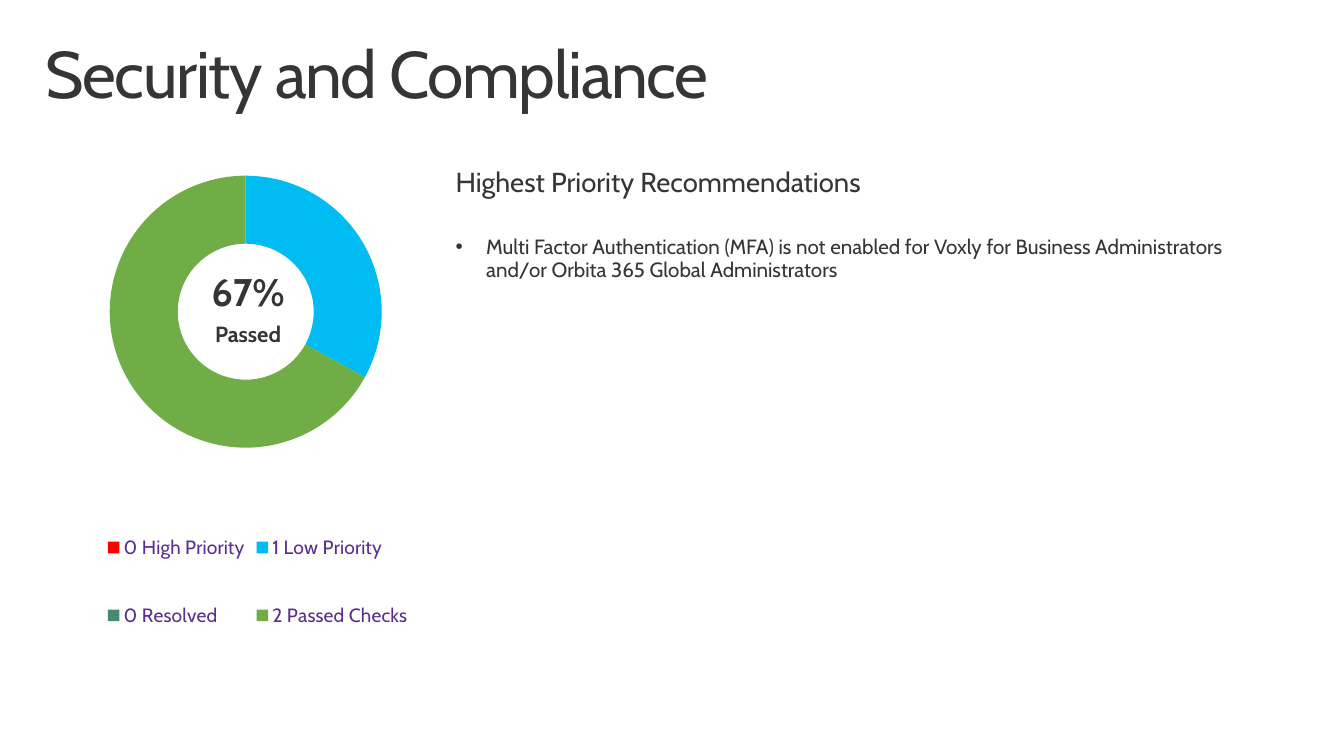
from dataclasses import dataclass

from lxml.etree import SubElement
from pptx import Presentation
from pptx.chart.data import CategoryChartData
from pptx.dml.color import RGBColor
from pptx.enum.chart import XL_CHART_TYPE, XL_LEGEND_POSITION
from pptx.enum.text import MSO_ANCHOR, PP_ALIGN
from pptx.oxml import parse_xml
from pptx.oxml.ns import nsdecls, qn
from pptx.util import Inches, Pt


@dataclass(frozen=True)
class Theme:
    font: str = "Cabin"
    text: str = "353535"
    legend: str = "5B2D91"
    title_size: int = 48
    score_size: int = 28
    heading_size: int = 20
    label_size: int = 16
    body_size: int = 15
    legend_size: int = 14
    chart_size: int = 10


@dataclass(frozen=True)
class Box:
    left: float
    top: float
    width: float
    height: float

    def lengths(self):
        return [Inches(n) for n in (self.left, self.top, self.width, self.height)]


THEME = Theme()
CHECKS = [
    ("0 High Priority ", 0, "FF0000"),
    ("", None, "001D49"),
    ("1 Low Priority", 33, "00BCF2"),
    ("", None, "A3008F"),
    ("0 Resolved", 0, "458B74"),
    ("", None, "D1D1D1"),
    ("2 Passed Checks", 67, "70AD47"),
]


def style_font(font, size, color=THEME.text, bold=False):
    font.name = THEME.font
    font.size = Pt(size)
    font.bold = bold
    font.color.rgb = RGBColor.from_string(color)


def add_text_frame(slide, box, side_inset, end_inset):
    frame = slide.shapes.add_textbox(*box.lengths()).text_frame
    frame.word_wrap = True
    frame.vertical_anchor = MSO_ANCHOR.TOP
    frame.margin_left = frame.margin_right = Inches(side_inset)
    frame.margin_top = frame.margin_bottom = Inches(end_inset)
    return frame


def write_paragraph(para, text, size, bold=False, space_after=6):
    para.text = text
    para.line_spacing = 0.9
    para.space_after = Pt(space_after)
    style_font(para.runs[0].font, size, bold=bold)


def add_title(slide, box):
    para = add_text_frame(slide, box, 0.16, 0.1).paragraphs[0]
    write_paragraph(para, "Security and Compliance", THEME.title_size, space_after=0)
    para.runs[0].font._element.set("spc", "-100")


def make_layout(left, top, width, height, inner=False):
    target = '<c:layoutTarget val="inner"/>' if inner else ""
    return parse_xml(
        f'<c:layout {nsdecls("c")}><c:manualLayout>{target}'
        '<c:xMode val="edge"/><c:yMode val="edge"/>'
        f'<c:x val="{left}"/><c:y val="{top}"/><c:w val="{width}"/><c:h val="{height}"/>'
        "</c:manualLayout></c:layout>"
    )


def add_legend(chart):
    chart.has_legend = True
    legend = chart.legend
    legend.position = XL_LEGEND_POSITION.BOTTOM
    legend.include_in_layout = False
    style_font(legend.font, THEME.legend_size, THEME.legend)
    element = legend._element
    for layout in element.findall(qn("c:layout")):
        element.remove(layout)
    overlay = element.find(qn("c:overlay"))
    for index, (name, _, _) in enumerate(CHECKS):
        if not name:
            entry = SubElement(element, qn("c:legendEntry"))
            SubElement(entry, qn("c:idx")).set("val", str(index))
            SubElement(entry, qn("c:delete")).set("val", "1")
            overlay.addprevious(entry)
    overlay.addprevious(make_layout(0.21, 0.66, 0.66, 0.31))


def add_checks_chart(slide, box):
    data = CategoryChartData()
    data.categories = [name for name, _, _ in CHECKS]
    data.add_series("Series 1", [value for _, value, _ in CHECKS])
    chart = slide.shapes.add_chart(XL_CHART_TYPE.DOUGHNUT, *box.lengths(), data).chart
    chart.has_title = False
    style_font(chart.font, THEME.chart_size)
    plot = chart.plots[0]
    plot.vary_by_categories = True
    for index, (_, _, color) in enumerate(CHECKS):
        point = plot.series[0].points[index]
        point.format.fill.solid()
        point.format.fill.fore_color.rgb = RGBColor.from_string(color)
        point.format.line.fill.background()
    plot._element.find(qn("c:holeSize")).set("val", "68")
    plot_area = plot._element.getparent()
    for layout in plot_area.findall(qn("c:layout")):
        plot_area.remove(layout)
    plot_area.insert(0, make_layout(0.23, 0.07, 0.57, 0.56, inner=True))
    add_legend(chart)


def add_score(slide, box):
    frame = add_text_frame(slide, box, 0.2, 0.16)
    score, label = frame.paragraphs[0], frame.add_paragraph()
    write_paragraph(score, "67%", THEME.score_size, bold=True)
    write_paragraph(label, "Passed", THEME.label_size, bold=True)
    score.alignment = label.alignment = PP_ALIGN.CENTER


def add_recommendations(slide, box):
    frame = add_text_frame(slide, box, 0.2, 0.16)
    write_paragraph(frame.paragraphs[0], "Highest Priority Recommendations", THEME.heading_size)
    item = frame.add_paragraph()
    write_paragraph(
        item,
        "Multi Factor Authentication (MFA) is not enabled for Voxly for Business "
        "Administrators and/or Orbita 365 Global Administrators",
        THEME.body_size,
    )
    item.space_before = Pt(22)
    properties = item._p.get_or_add_pPr()
    properties.set("marL", str(Inches(0.31)))
    properties.set("indent", str(-Inches(0.31)))
    SubElement(properties, qn("a:buFont")).set("typeface", "Arial")
    SubElement(properties, qn("a:buChar")).set("char", "•")


def main():
    deck = Presentation()
    deck.slide_width, deck.slide_height = Inches(13.6), Inches(7.65)
    slide = deck.slides.add_slide(deck.slide_layouts[6])
    add_title(slide, Box(0.3, 0.32, 13, 1))
    add_checks_chart(slide, Box(0, 1.1, 4.83, 5.87))
    add_score(slide, Box(1.8, 2.61, 1.42, 3.19))
    add_recommendations(slide, Box(4.41, 1.55, 8.41, 1.25))
    deck.save("out.pptx")


if __name__ == "__main__":
    main()
